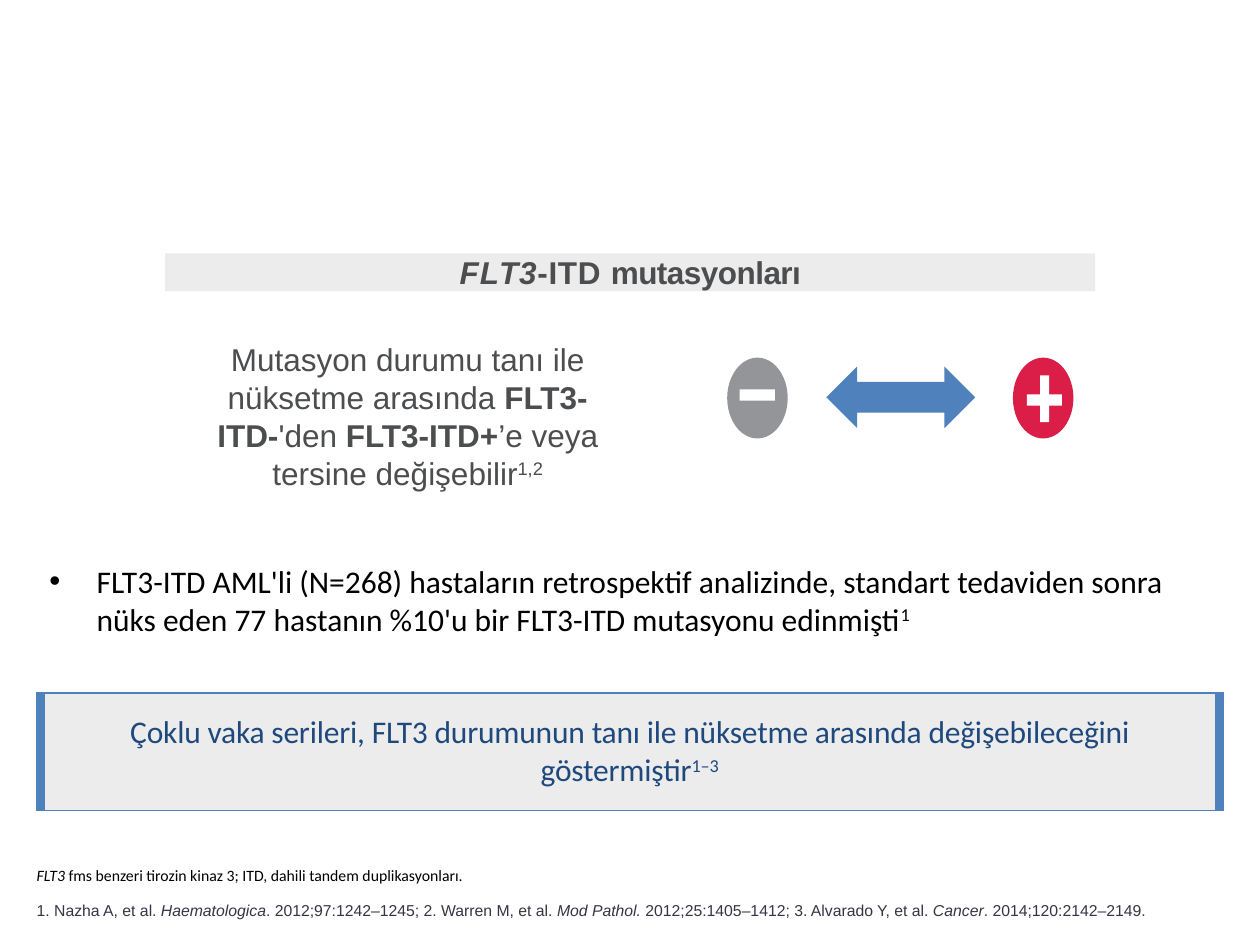
from lxml.etree import SubElement
from pptx import Presentation
from pptx.dml.color import RGBColor
from pptx.enum.shapes import MSO_SHAPE
from pptx.enum.text import MSO_ANCHOR, MSO_AUTO_SIZE, PP_ALIGN
from pptx.oxml.ns import qn
from pptx.util import Cm, Pt

BLACK = RGBColor(0x00, 0x00, 0x00)
WHITE = RGBColor(0xFF, 0xFF, 0xFF)
CHARCOAL = RGBColor(0x4C, 0x4D, 0x4F)
GRAY = RGBColor(0x93, 0x95, 0x98)
RED = RGBColor(0xDA, 0x1E, 0x48)
BLUE = RGBColor(0x4F, 0x81, 0xBD)
NAVY = RGBColor(0x1F, 0x49, 0x7D)
INK = RGBColor(0x37, 0x35, 0x45)

BOLD = {"bold": True}
ITALIC = {"italic": True}
SUPERSCRIPT = {"baseline": 30000}
XML_KEYS = ("baseline", "spc")
NO_INSETS = dict.fromkeys(("margin_left", "margin_top", "margin_right", "margin_bottom"), 0)
FOOT_FRAME = {"margin_left": 0, "margin_right": 0, "vertical_anchor": MSO_ANCHOR.BOTTOM}


def set_attributes(target, values):
    """Set every attribute named in a dict of values."""
    for name, value in values.items():
        setattr(target, name, value)


def place(shape, box):
    """Move and size a shape with a box given in centimetres."""
    set_attributes(shape, dict(zip(("left", "top", "width", "height"), map(Cm, box))))


def write(text_frame, spans, font, color, size, paragraph_format=None):
    """Write one paragraph of formatted spans and return it."""
    paragraph = text_frame.paragraphs[0]
    set_attributes(paragraph, paragraph_format or {})
    for text, values in spans:
        run = paragraph.add_run()
        run.text = text
        run.font.color.rgb = color
        set_attributes(run.font, {"name": font, "size": Pt(size)})
        for name, value in values.items():
            if name in XML_KEYS:
                run._r.get_or_add_rPr().set(name, str(value))
            else:
                setattr(run.font, name, value)
    return paragraph


def set_frame(text_frame, values):
    """Wrap a text frame at a fixed size and apply its format values."""
    set_attributes(text_frame, {"word_wrap": True, "auto_size": MSO_AUTO_SIZE.NONE, **values})


def fill_solid(owner, element, color, alpha=None):
    """Fill a shape or cell, with an optional opacity in percent."""
    owner.fill.solid()
    owner.fill.fore_color.rgb = color
    if alpha:
        color_element = next(element.iter(qn("a:srgbClr")))
        SubElement(color_element, qn("a:alpha"), val=str(alpha * 1000))


def add_filled(slide, kind, box, color, alpha=None):
    """Add a flat preset shape without an outline."""
    shape = slide.shapes.add_shape(kind, *map(Cm, box))
    shape.shadow.inherit = False
    fill_solid(shape, shape._element, color, alpha)
    shape.line.fill.background()
    return shape


def add_text(slide, box, frame_values):
    """Add a wrapping text box and return its text frame."""
    text_frame = slide.shapes.add_textbox(*map(Cm, box)).text_frame
    set_frame(text_frame, frame_values)
    return text_frame


def add_header(slide):
    """Add the shaded heading bar."""
    bar = add_filled(slide, MSO_SHAPE.RECTANGLE, (3.33, 5.11, 18.75, 0.76), CHARCOAL, 10)
    set_frame(bar.text_frame, NO_INSETS)
    spans = [("F", {**ITALIC, "spc": 70}), ("L", {**ITALIC, "spc": -40}),
             ("T3", {**ITALIC, "spc": 40}), ("-ITD ", {"spc": 40}),
             ("mutasyonları", {"spc": -30})]
    spans = [(text, {**BOLD, **values}) for text, values in spans]
    write(bar.text_frame, spans, "Arial", CHARCOAL, 18, {"alignment": PP_ALIGN.CENTER})


def add_status_change(slide):
    """Add the negative and positive signs with the arrow between them."""
    for left, color in ((14.66, GRAY), (20.42, RED)):
        add_filled(slide, MSO_SHAPE.OVAL, (left, 7.21, 1.22, 1.63), color)
    for box in ((14.91, 7.85, 0.71, 0.23), (20.7, 7.95, 0.71, 0.23), (20.97, 7.57, 0.18, 0.94)):
        add_filled(slide, MSO_SHAPE.RECTANGLE, box, WHITE)
    add_filled(slide, MSO_SHAPE.LEFT_RIGHT_ARROW, (16.66, 7.39, 3, 1.24), BLUE)


def add_conclusion(slide):
    """Add the one-cell table with thick side borders."""
    table = slide.shapes.add_table(1, 1, *map(Cm, (0.81, 13.97, 23.77, 2.31))).table
    set_attributes(table, {"first_row": False, "horz_banding": False})
    cell = table.cell(0, 0)
    set_attributes(cell, {"margin_left": Cm(0.1), "margin_right": Cm(0.1),
                          "margin_top": Cm(0.41), "margin_bottom": Cm(0.41),
                          "vertical_anchor": MSO_ANCHOR.MIDDLE})
    fill_solid(cell, cell._tc, CHARCOAL, 10)
    properties = cell._tc.get_or_add_tcPr()
    for index, (side, width) in enumerate((("L", 6), ("R", 6), ("T", 1), ("B", 1))):
        border = SubElement(properties, qn(f"a:ln{side}"), w=str(Pt(width)))
        solid = SubElement(border, qn("a:solidFill"))
        SubElement(solid, qn("a:srgbClr"), val=str(BLUE))
        properties.insert(index, border)
    spans = [("Çoklu vaka serileri, FLT3 durumunun tanı ile nüksetme arasında "
              "değişebileceğini göstermiştir", {"spc": -10}),
             ("1–3", {**SUPERSCRIPT, "spc": -10})]
    write(cell.text_frame, spans, "Calibri", NAVY, 18, {"alignment": PP_ALIGN.CENTER})


def fill_placeholders(slide):
    """Fill the bullet and abbreviation placeholders and drop the title."""
    title, bullet, abbreviations = slide.placeholders
    title._element.getparent().remove(title._element)

    place(bullet, (0.74, 11.2, 23.93, 5.11))
    set_frame(bullet.text_frame, {})
    spans = [("FLT3-ITD AML'li (N=268) hastaların retrospektif analizinde, standart tedaviden "
              "sonra nüks eden 77 hastanın %10'u bir FLT3-ITD mutasyonu edinmişti", {}),
             ("1", SUPERSCRIPT)]
    write(bullet.text_frame, spans, "Calibri", BLACK, 18)

    place(abbreviations, (0.74, 16.69, 23.93, 1.27))
    set_frame(abbreviations.text_frame, FOOT_FRAME)
    spans = [("FLT3 ", ITALIC),
             ("fms benzeri tirozin kinaz 3; ITD, dahili tandem duplikasyonları.", {})]
    paragraph = write(abbreviations.text_frame, spans, "Calibri", BLACK, 9)
    properties = paragraph._p.get_or_add_pPr()
    for name in ("marL", "indent"):
        properties.set(name, "0")
    SubElement(properties, qn("a:buNone"))


def main():
    """Build and save the slide."""
    presentation = Presentation()
    set_attributes(presentation, {"slide_width": Cm(25.4), "slide_height": Cm(19.05)})
    slide = presentation.slides.add_slide(presentation.slide_layouts[3])
    fill_placeholders(slide)
    add_header(slide)

    spans = [("Mutasyon durumu tanı ile nüksetme arasında ", {}), ("FLT3-ITD-", BOLD),
             ("'den ", {}), ("FLT3-ITD+", BOLD), ("’e veya tersine değişebilir", {}),
             ("1,2", SUPERSCRIPT)]
    write(add_text(slide, (3.76, 6.86, 8.92, 3.07), NO_INSETS), spans, "Arial", CHARCOAL, 18,
          {"alignment": PP_ALIGN.CENTER})
    add_status_change(slide)
    add_conclusion(slide)

    spans = [("1. Nazha A, et al. ", {}), ("Haematologica", ITALIC),
             (". 2012;97:1242–1245; 2. Warren M, et al. ", {}), ("Mod Pathol.", ITALIC),
             (" 2012;25:1405–1412; 3. Alvarado Y, et al. ", {}), ("Cancer", ITALIC),
             (". 2014;120:2142–2149.", {})]
    write(add_text(slide, (0.74, 17.83, 23.93, 0.84), FOOT_FRAME), spans, "Arial", INK, 9,
          {"line_spacing": 1.1, "space_before": Pt(6), "space_after": Pt(6)})
    presentation.save("out.pptx")


if __name__ == "__main__":
    main()
